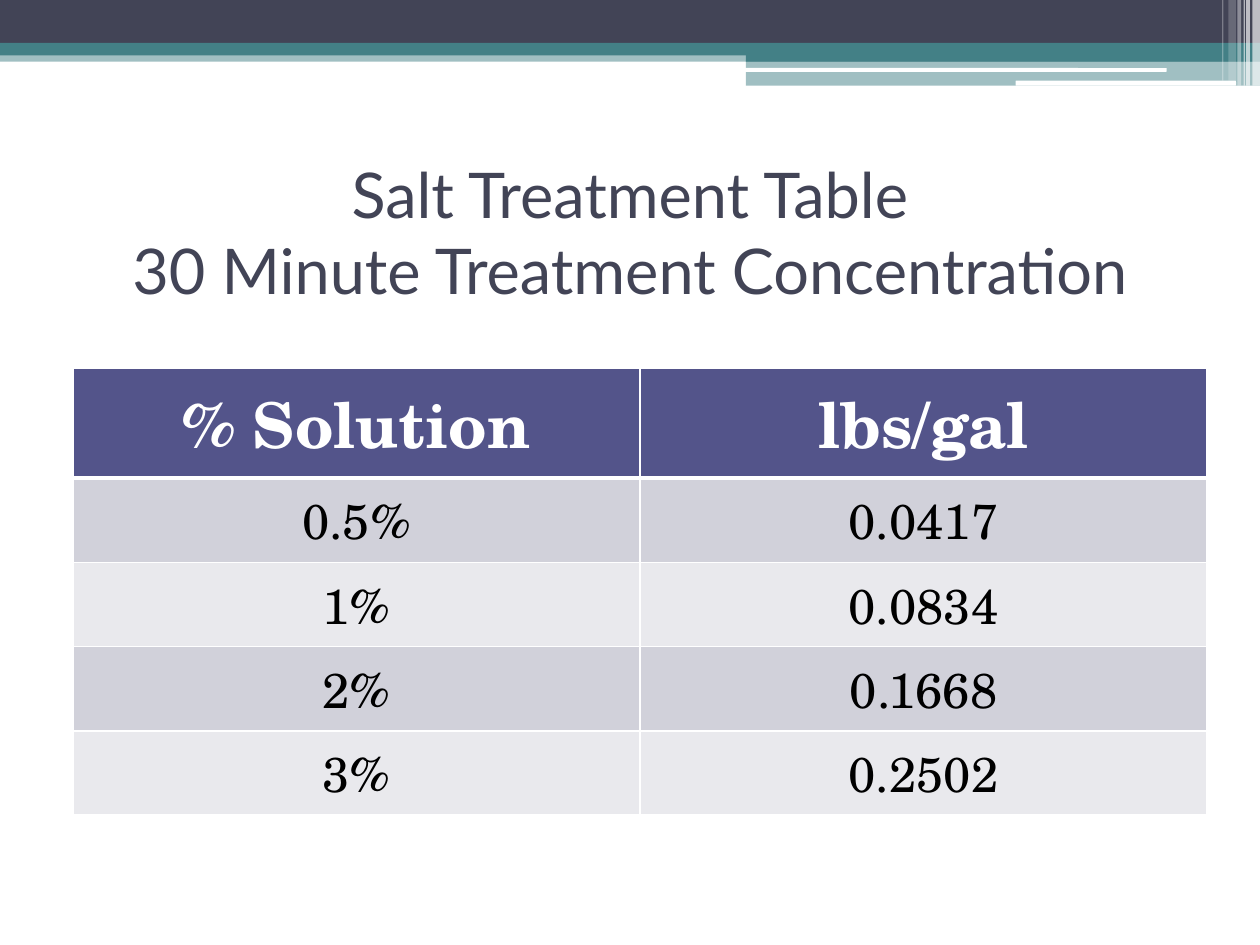
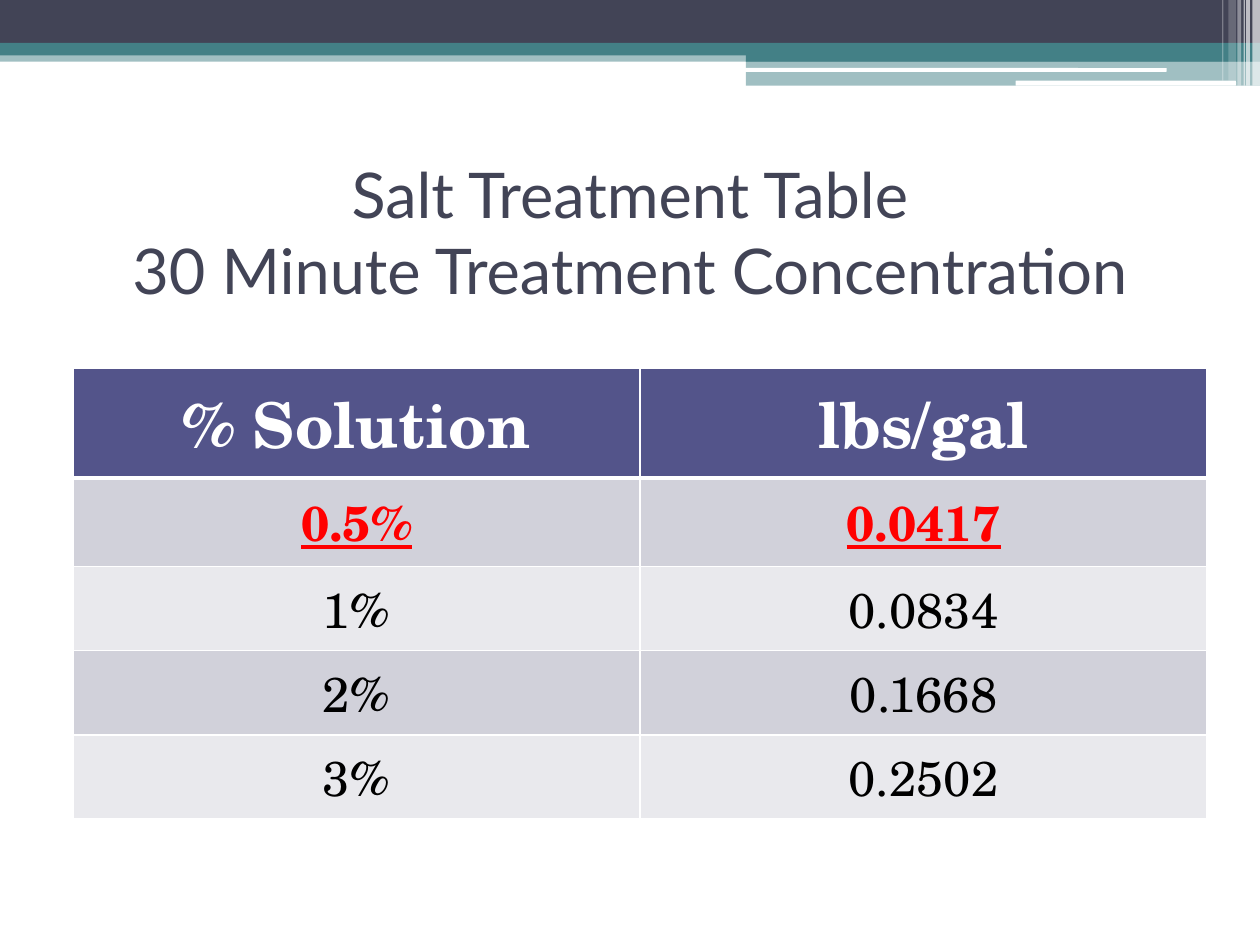
from dataclasses import dataclass

from lxml.etree import SubElement
from pptx import Presentation
from pptx.dml.color import RGBColor
from pptx.enum.shapes import MSO_SHAPE
from pptx.enum.text import MSO_ANCHOR, MSO_AUTO_SIZE, PP_ALIGN
from pptx.oxml.ns import qn
from pptx.util import Inches, Pt


@dataclass(frozen=True)
class Theme:
    navy: str = "424456"
    teal: str = "438086"
    white: str = "FFFFFF"
    black: str = "000000"
    red: str = "FF0000"
    header: str = "53548A"
    bands: tuple = ("D1D1DA", "E9E9ED")
    title_font: str = "Lato"
    table_font: str = "TeX Gyre Schola"
    title_size: int = 36
    header_size: int = 36
    body_size: int = 28


T = Theme()

TITLE = "Salt Treatment Table\v30 Minute Treatment Concentration"
ROWS = [
    ("% Solution", "lbs/gal"),
    ("0.5%", "0.0417"),
    ("1%", "0.0834"),
    ("2%", "0.1668"),
    ("3%", "0.2502"),
]
HIGHLIGHTED_ROWS = [None, 1]  # one entry per slide

# left, top, width, height, colour, opacity in percent
BANDS = [
    (0, 0.4, 10, 0.09, T.teal, 50),
    (0, 0, 10, 0.34, T.navy, 100),
    (0, 0.34, 10, 0.1, T.teal, 100),
    (5.92, 0.39, 4.08, 0.1, T.teal, 100),
    (5.92, 0.48, 4.08, 0.2, T.teal, 50),
]
WHITE_BARS = [
    (5.91, 0.54, 3.35, 0.03, T.white, 100),
    (8.06, 0.64, 1.75, 0.04, T.white, 100),
]
STRIPES = [
    (left, 0, width, height, T.white, opacity)
    for left, width, height, opacity in [
        (9.94, 0.06, 0.68, 65),
        (9.89, 0.03, 0.68, 65),
        (9.87, 0.01, 0.68, 60),
        (9.82, 0.03, 0.68, 40),
        (9.75, 0.06, 0.64, 20),
        (9.7, 0.01, 0.64, 30),
    ]
]


def add_bar(s, kind, left, top, width, height, color, opacity):
    sp = s.shapes.add_shape(kind, Inches(left), Inches(top), Inches(width), Inches(height))
    sp.shadow.inherit = False
    sp.line.fill.background()
    sp.fill.solid()
    sp.fill.fore_color.rgb = RGBColor.from_string(color)
    if opacity < 100:
        clr = sp.element.spPr.find(f".//{qn('a:srgbClr')}")
        SubElement(clr, qn("a:alpha"), val=str(opacity * 1000))
    return sp


def add_border(cell, side, width):
    ln = SubElement(cell._tc.get_or_add_tcPr(), qn(f"a:{side}"), w=str(Pt(width)))
    fill = SubElement(ln, qn("a:solidFill"))
    SubElement(fill, qn("a:srgbClr"), val=T.white)


prs = Presentation()
prs.slide_width, prs.slide_height = Inches(10), Inches(7.5)
layout = prs.slide_layouts[5]
slides = [prs.slides.add_slide(layout) for _ in HIGHLIGHTED_ROWS]

# Top bands, moved to the shared layout behind its placeholders
bars = [(MSO_SHAPE.RECTANGLE, bar) for bar in BANDS]
bars += [(MSO_SHAPE.ROUNDED_RECTANGLE, bar) for bar in WHITE_BARS]
bars += [(MSO_SHAPE.RECTANGLE, bar) for bar in STRIPES]
first_placeholder = layout.placeholders[0].element
for number, (kind, bar) in enumerate(bars, start=1):
    sp = add_bar(slides[0], kind, *bar)
    sp.name = f"Top band {number}"
    sp.element.nvSpPr.cNvPr.set("id", str(100 + number))
    first_placeholder.addprevious(sp.element)

for s, highlighted in zip(slides, HIGHLIGHTED_ROWS):
    # Title
    title = s.shapes.title
    title.left, title.top = Inches(0.5), Inches(1.25)
    title.width, title.height = Inches(9), Inches(1.17)
    tf = title.text_frame
    tf.text = TITLE
    tf.word_wrap = True
    tf.auto_size = MSO_AUTO_SIZE.NONE
    tf.vertical_anchor = MSO_ANCHOR.MIDDLE
    p = tf.paragraphs[0]
    p.alignment = PP_ALIGN.CENTER
    p.font.name, p.font.size = T.title_font, Pt(T.title_size)
    p.font.color.rgb = RGBColor.from_string(T.navy)

    # Treatment table
    frame = s.shapes.add_table(len(ROWS), 2, Inches(0.58), Inches(2.92),
                               Inches(9), Inches(0.41 * len(ROWS)))
    table = frame.table
    for i, values in enumerate(ROWS):
        is_header, is_marked = i == 0, i == highlighted
        fill = T.header if is_header else T.bands[(i - 1) % 2]
        color = T.white if is_header else T.red if is_marked else T.black
        for j, value in enumerate(values):
            cell = table.cell(i, j)
            add_border(cell, "lnL", 1)
            add_border(cell, "lnR", 1)
            add_border(cell, "lnT", 3 if i == 1 else 1)
            add_border(cell, "lnB", 3 if is_header else 1)
            cell.fill.solid()
            cell.fill.fore_color.rgb = RGBColor.from_string(fill)
            cell.text = value
            p = cell.text_frame.paragraphs[0]
            p.alignment = PP_ALIGN.CENTER
            p.font.name = T.table_font
            p.font.size = Pt(T.header_size if is_header else T.body_size)
            p.font.bold = is_header or is_marked
            p.font.underline = is_marked
            p.font.color.rgb = RGBColor.from_string(color)

prs.save("out.pptx")
